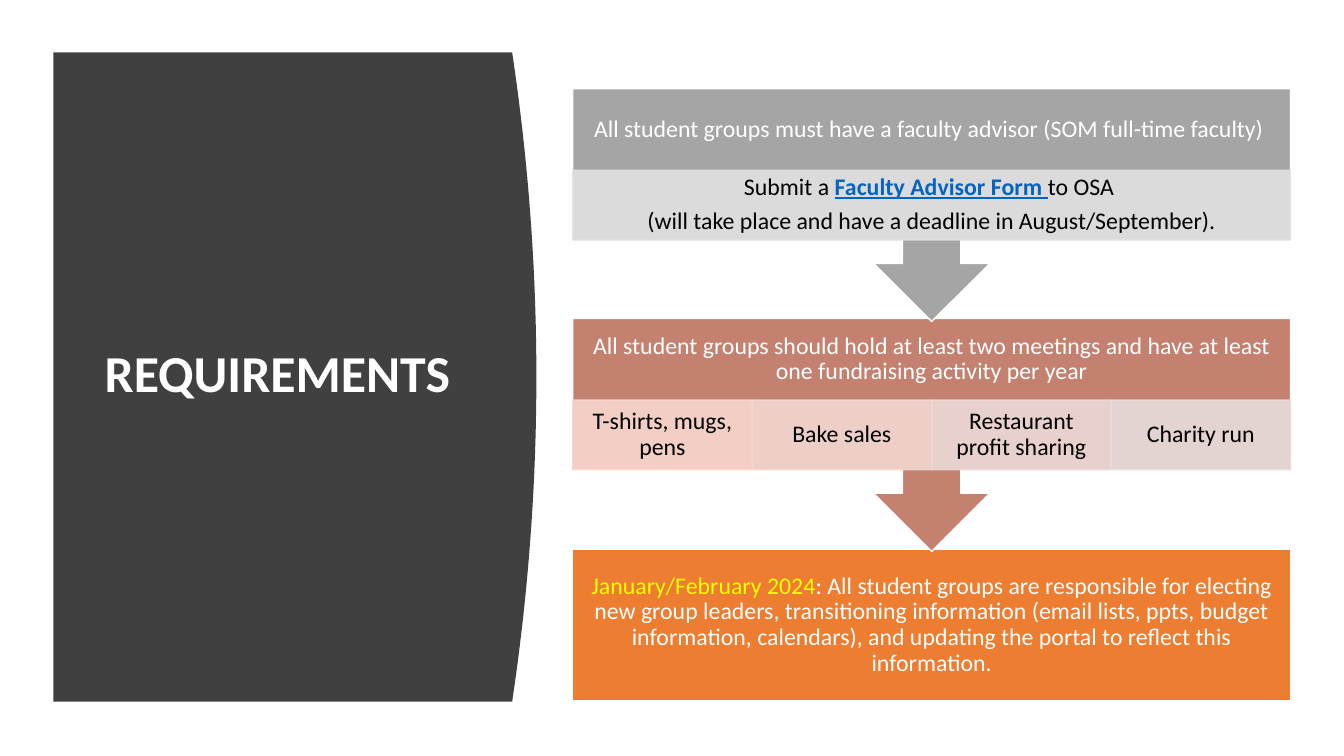
"""Build the slide of student group requirements."""
from typing import NamedTuple

from lxml.etree import SubElement
from pptx import Presentation
from pptx.dml.color import RGBColor
from pptx.enum.shapes import MSO_SHAPE
from pptx.enum.text import MSO_ANCHOR, PP_ALIGN
from pptx.oxml.ns import qn
from pptx.util import Inches, Pt

WHITE = RGBColor(0xFF, 0xFF, 0xFF)
BLACK = RGBColor(0x00, 0x00, 0x00)
DARK = RGBColor(0x40, 0x40, 0x40)
GRAY = RGBColor(0xA5, 0xA5, 0xA5)
PALE = RGBColor(0xE1, 0xE1, 0xE1)
ROSE = RGBColor(0xC4, 0x81, 0x70)
TINTS = [RGBColor(0xF8, 0xD7, 0xCE), RGBColor(0xF2, 0xD8, 0xD2),
         RGBColor(0xED, 0xD9, 0xD7), RGBColor(0xE7, 0xDC, 0xDC)]
ORANGE = RGBColor(0xED, 0x7D, 0x31)
YELLOW = RGBColor(0xFF, 0xFF, 0x00)
BLUE = RGBColor(0x05, 0x63, 0xC1)

LEFT, WIDTH = 5.68, 7.12
HEAD, TILE, CALL = 0.81, 0.69, 2.31


class Run(NamedTuple):
    text: str
    color: RGBColor = WHITE
    strong: bool = False


class Box(NamedTuple):
    left: float
    top: float
    width: float
    height: float


class Tile(NamedTuple):
    fill: RGBColor
    lines: list[list[Run]]


class Step(NamedTuple):
    top: float
    fill: RGBColor
    head: str
    tiles: list[Tile]


STEPS = [
    Step(3.16, ROSE, "All student groups should hold at least two meetings and "
         "have at least one fundraising activity per year",
         [Tile(tint, [[Run(text, BLACK)]]) for tint, text in zip(TINTS, [
             "T-shirts, mugs, pens", "Bake sales",
             "Restaurant profit sharing", "Charity run"])]),
    Step(0.88, GRAY, "All student groups must have a faculty advisor "
         "(SOM full-time faculty) ",
         [Tile(PALE, [
             [Run("Submit a ", BLACK), Run("Faculty Advisor Form ", BLUE, True),
              Run("to OSA ", BLACK)],
             [Run("(will take place and have a deadline in August/September).",
                  BLACK)]])]),
]
DUTY = [Run("January/February 2024", YELLOW),
        Run(": All student groups are responsible for electing new group leaders, "
            "transitioning information (email lists, ppts, budget information, "
            "calendars), and updating the portal to reflect this information.")]


def apply(item, values: dict) -> None:
    """Set each named value on the item."""
    for name, value in values.items():
        setattr(item, name, value)


def write(shape, lines: list[list[Run]], side: float = 0.13, edge: float = 0.13,
          size: float = 17, align=PP_ALIGN.CENTER) -> None:
    """Fill the shape with lines of styled runs."""
    frame = shape.text_frame
    apply(frame, {"word_wrap": True, "vertical_anchor": MSO_ANCHOR.MIDDLE,
                  "margin_left": Inches(side), "margin_right": Inches(side),
                  "margin_top": Inches(edge), "margin_bottom": Inches(edge)})
    for index, line in enumerate(lines):
        para = frame.add_paragraph() if index else frame.paragraphs[0]
        apply(para, {"alignment": align, "line_spacing": 0.9,
                     "space_after": Pt(6)})
        for part in line:
            run = para.add_run()
            run.text = part.text
            apply(run.font, {"name": "Calibri", "size": Pt(size),
                             "bold": part.strong,
                             "underline": part.color == BLUE})
            run.font.color.rgb = part.color


def draw(shapes, kind: MSO_SHAPE, box: Box, fill: RGBColor, line: RGBColor):
    """Add a flat preset shape."""
    shape = shapes.add_shape(kind, *map(Inches, box))
    shape.shadow.inherit = False
    shape.fill.solid()
    shape.fill.fore_color.rgb = fill
    shape.line.color.rgb = line
    shape.line.width = Pt(1)
    return shape


def label(shapes, box: Box, lines: list[list[Run]], **style) -> None:
    """Add a text box."""
    write(shapes.add_textbox(*map(Inches, box)), lines, **style)


def panel(shapes) -> None:
    """Draw the dark panel with its bowed right edge."""
    left, top, base, side, bow, count = 0.53, 0.52, 6.96, 5.08, 0.24, 40
    edge = []
    for index in range(count + 1):
        part = index / count
        edge.append((Inches(side + bow * 4 * part * (1 - part)),
                     Inches(top + (base - top) * part)))
    pen = shapes.build_freeform(Inches(left), Inches(top))
    pen.add_line_segments(edge + [(Inches(left), Inches(base))], close=True)
    shape = pen.convert_to_shape()
    shape.shadow.inherit = False
    shape.fill.solid()
    shape.fill.fore_color.rgb = DARK
    shape.line.fill.background()


def stage(shapes, step: Step) -> None:
    """Draw a callout with its heading and row of tiles."""
    call = draw(shapes, MSO_SHAPE.UP_ARROW_CALLOUT,
                Box(LEFT, step.top, WIDTH, CALL), step.fill, WHITE)
    call.rotation = 180
    label(shapes, Box(LEFT, step.top, WIDTH, HEAD), [[Run(step.head)]])
    width = WIDTH / len(step.tiles)
    for index, tile in enumerate(step.tiles):
        box = Box(LEFT + index * width, step.top + HEAD, width, TILE)
        shape = draw(shapes, MSO_SHAPE.RECTANGLE, box, tile.fill, tile.fill)
        for color in shape._element.spPr.iter(qn("a:srgbClr")):
            SubElement(color, qn("a:alpha"), val="90000")
        write(shape, tile.lines, edge=0.02)


def main() -> None:
    """Make and save the deck."""
    deck = Presentation()
    apply(deck, {"slide_width": Inches(13.33), "slide_height": Inches(7.5)})
    shapes = deck.slides.add_slide(deck.slide_layouts[6]).shapes
    panel(shapes)
    label(shapes, Box(0.94, 1.11, 4.38, 5.24),
          [[Run("REQUIREMENTS", strong=True)]],
          side=0.1, edge=0.05, size=37, align=PP_ALIGN.LEFT)
    duty = draw(shapes, MSO_SHAPE.RECTANGLE, Box(LEFT, 5.45, WIDTH, 1.5),
                ORANGE, WHITE)
    write(duty, [DUTY])
    for step in STEPS:
        stage(shapes, step)
    deck.save("out.pptx")


if __name__ == "__main__":
    main()
